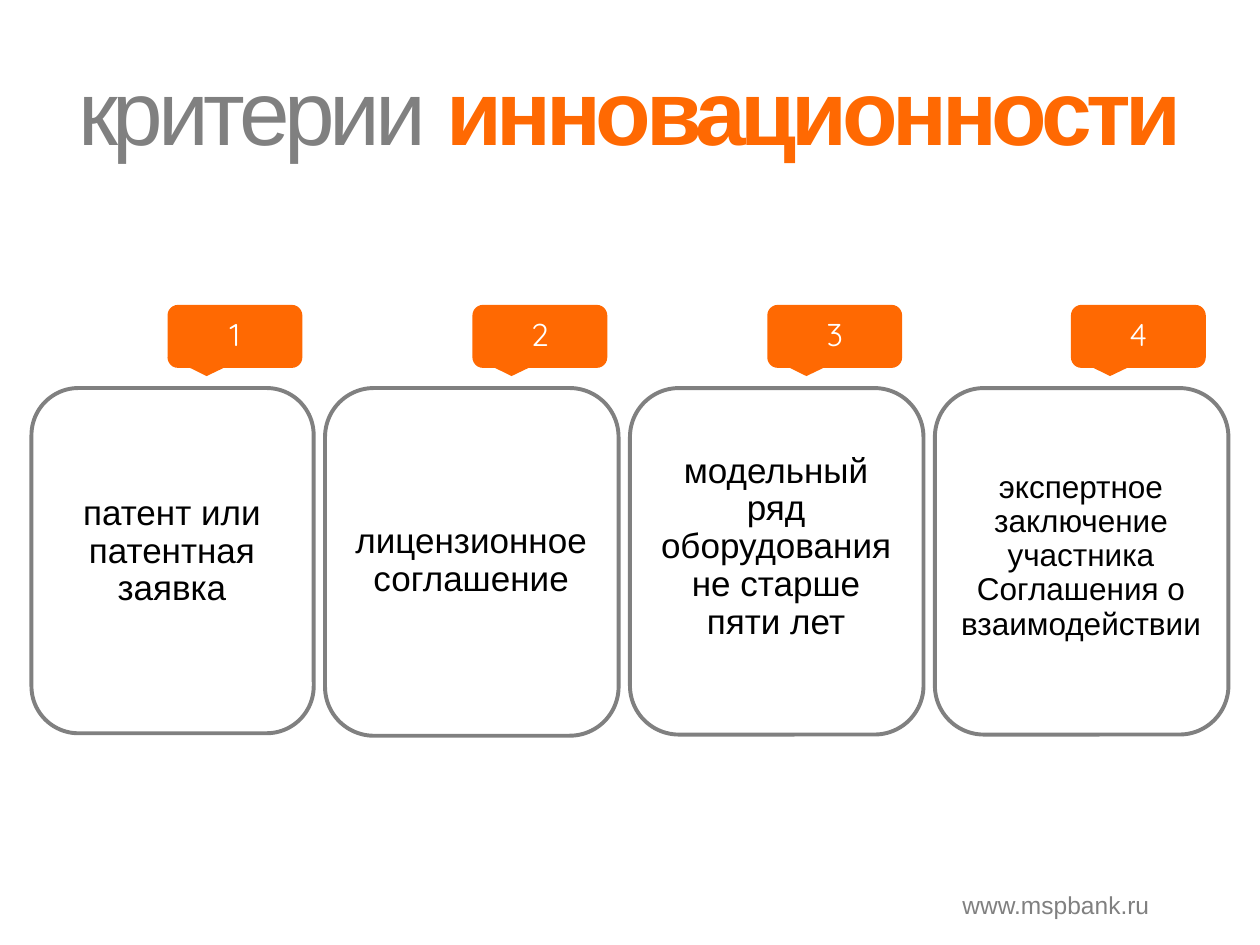
from dataclasses import dataclass

from pptx import Presentation
from pptx.dml.color import RGBColor
from pptx.enum.shapes import MSO_SHAPE
from pptx.enum.text import MSO_ANCHOR, PP_ALIGN
from pptx.util import Inches, Pt

CARD_SHAPE = MSO_SHAPE.ROUNDED_RECTANGLE
BADGE_SHAPE = MSO_SHAPE.ROUNDED_RECTANGULAR_CALLOUT
CENTER = PP_ALIGN.CENTER
TOP, MIDDLE = MSO_ANCHOR.TOP, MSO_ANCHOR.MIDDLE


@dataclass(frozen=True)
class Theme:
    gray: RGBColor = RGBColor(0x80, 0x80, 0x80)
    orange: RGBColor = RGBColor(0xFF, 0x69, 0x02)
    black: RGBColor = RGBColor(0, 0, 0)
    white: RGBColor = RGBColor(0xFF, 0xFF, 0xFF)
    body_font: str = "Arial"
    number_font: str = "Quicksand"
    title_size: int = 52
    card_size: int = 20
    small_card_size: int = 18
    number_size: int = 18
    footer_size: int = 14
    title_tracking: int = -300  # hundredths of a point


THEME = Theme()
SLIDE_WIDTH, SLIDE_HEIGHT = 10, 7.5
CARD_TOP = 3.08
BADGE_TOP, BADGE_WIDTH, BADGE_HEIGHT = 2.42, 1.07, 0.5


@dataclass(frozen=True)
class Criterion:
    text: str
    left: float
    width: float
    height: float
    badge_left: float
    text_top: float
    size: int = THEME.card_size


CRITERIA = [
    Criterion("патент или патентная заявка", 0.25, 2.24, 2.74, 1.33, 0.74),
    Criterion("лицензионное соглашение", 2.58, 2.33, 2.76, 3.75, 0.96),
    Criterion("модельный ряд оборудования не старше пяти лет",
              5, 2.33, 2.75, 6.09, 0.4),
    Criterion("экспертное заключение участника Соглашения о взаимодействии",
              7.42, 2.33, 2.75, 8.5, 0.55, THEME.small_card_size),
]


def set_frame(text_frame, insets, anchor):
    text_frame.word_wrap = True
    text_frame.vertical_anchor = anchor
    (text_frame.margin_left, text_frame.margin_top,
     text_frame.margin_right, text_frame.margin_bottom) = map(Inches, insets)


def format_run(run, size, color, font=THEME.body_font, bold=False):
    run.font.size = Pt(size)
    run.font.name = font
    run.font.color.rgb = color
    run.font.bold = bold


def set_text(text_frame, text, size, color, spacing, font=THEME.body_font):
    text_frame.text = text
    paragraph = text_frame.paragraphs[0]
    paragraph.alignment = CENTER
    paragraph.line_spacing = spacing
    format_run(paragraph.runs[0], size, color, font)


def add_title(slide, parts):
    box = slide.shapes.add_textbox(
        Inches(0.05 * SLIDE_WIDTH), Inches(0.08 * SLIDE_HEIGHT),
        Inches(0.9 * SLIDE_WIDTH), Inches(0.69))
    set_frame(box.text_frame, (0, 0, 0, 0), MIDDLE)
    paragraph = box.text_frame.paragraphs[0]
    paragraph.alignment = CENTER
    paragraph.line_spacing = 0.8
    for text, color, bold in parts:
        run = paragraph.add_run()
        run.text = text
        format_run(run, THEME.title_size, color, bold=bold)
        run.font._element.set("spc", str(THEME.title_tracking))


def add_card(slide, criterion):
    card = slide.shapes.add_shape(
        CARD_SHAPE, Inches(criterion.left), Inches(CARD_TOP),
        Inches(criterion.width), Inches(criterion.height))
    card.shadow.inherit = False
    card.fill.background()
    card.line.color.rgb = THEME.gray
    card.line.width = Pt(2.25)
    # Narrow side insets keep the longest word on one line
    set_frame(card.text_frame, (0.07, criterion.text_top, 0.08, 0.13), TOP)
    set_text(card.text_frame, criterion.text, criterion.size, THEME.black, 0.9)


def add_badge(slide, number, left):
    badge = slide.shapes.add_shape(
        BADGE_SHAPE, Inches(left), Inches(BADGE_TOP),
        Inches(BADGE_WIDTH), Inches(BADGE_HEIGHT))
    # Pointer tip, as shares of the badge measured from its centre
    badge.adjustments[0] = -0.21
    badge.adjustments[1] = 0.63
    badge.shadow.inherit = False
    badge.fill.solid()
    badge.fill.fore_color.rgb = THEME.orange
    badge.line.fill.background()
    set_frame(badge.text_frame, (0.16, 0.1, 0.16, 0.1), MIDDLE)
    set_text(badge.text_frame, str(number), THEME.number_size, THEME.white,
             0.9, THEME.number_font)


def add_footer(slide, text):
    box = slide.shapes.add_textbox(
        Inches(7.42), Inches(6.83), Inches(1.92), Inches(0.44))
    set_frame(box.text_frame, (0, 0, 0, 0), TOP)
    set_text(box.text_frame, text, THEME.footer_size, THEME.gray, 2.0)


def main():
    presentation = Presentation()
    presentation.slide_width = Inches(SLIDE_WIDTH)
    presentation.slide_height = Inches(SLIDE_HEIGHT)
    slide = presentation.slides.add_slide(presentation.slide_layouts[6])

    # Footer and heading
    add_footer(slide, "www.mspbank.ru")
    add_title(slide, [("критерии ", THEME.gray, False),
                      ("инновационности", THEME.orange, True)])

    # Numbered criteria
    for number, criterion in enumerate(CRITERIA, start=1):
        add_card(slide, criterion)
        add_badge(slide, number, criterion.badge_left)

    presentation.save("out.pptx")


if __name__ == "__main__":
    main()
